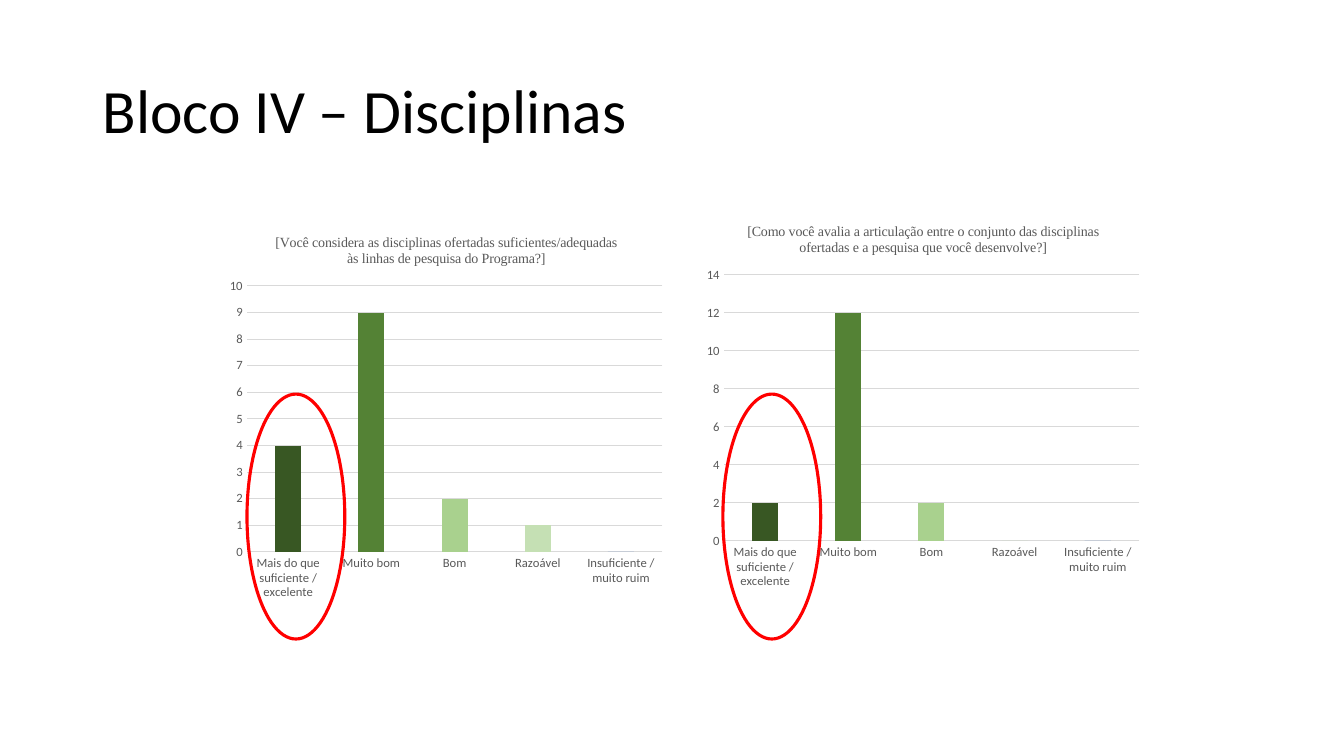
import pptx
import pptx.chart.data
import pptx.dml.color
import pptx.enum.chart
import pptx.enum.shapes
import pptx.enum.text
import pptx.util
from pptx.util import Inches, Pt

RATINGS = ["Mais do que suficiente / excelente", "Muito bom", "Bom",
           "Razoável", "Insuficiente / muito ruim"]
RATING_GREENS = ["385723", "548235", "A9D18E", "C5E0B4"]
GREY_TEXT, GREY_LINE = "595959", "D9D9D9"
CHART_SIZE = (4.47, 3.87)
HIGHLIGHT_TOP, HIGHLIGHT_SIZE = 3.91, (0.97, 2.43)

# question, answers per rating, chart left and top, axis maximum and step, highlight left
QUESTIONS = [
    ("[Você considera as disciplinas ofertadas suficientes/adequadas "
     "às linhas de pesquisa do Programa?]",
     (4, 9, 2, 1, 0), (2.19, 2.16), (10, 1), 2.45),
    ("[Como você avalia a articulação entre o conjunto das disciplinas "
     "ofertadas e a pesquisa que você desenvolve?]",
     (2, 12, 2, 0, 0), (6.92, 2.05), (14, 2), 7.17),
]


def rgb(code):
    return pptx.dml.color.RGBColor.from_string(code)


def box(position, size):
    return [Inches(length) for length in (*position, *size)]


def style_font(font, size, color, name="Calibri"):
    font.size = Pt(size)
    font.name = name
    font.bold = False
    font.color.rgb = rgb(color)


def style_line(line, color, width):
    line.color.rgb = rgb(color)
    line.width = Pt(width)


def add_heading(slide, wording):
    frame = slide.shapes.add_textbox(*box((0.92, 0.4), (11.5, 1.45))).text_frame
    frame.word_wrap = True
    frame.vertical_anchor = pptx.enum.text.MSO_ANCHOR.MIDDLE
    paragraph = frame.paragraphs[0]
    paragraph.line_spacing = 0.9
    run = paragraph.add_run()
    run.text = wording
    style_font(run.font, 44, "000000")


def style_axes(chart, maximum, step):
    for axis in (chart.category_axis, chart.value_axis):
        axis.major_tick_mark = pptx.enum.chart.XL_TICK_MARK.NONE
        axis.minor_tick_mark = pptx.enum.chart.XL_TICK_MARK.NONE
        style_font(axis.tick_labels.font, 9, GREY_TEXT)
    style_line(chart.category_axis.format.line, GREY_LINE, 0.75)
    counts = chart.value_axis
    counts.minimum_scale, counts.maximum_scale = 0, maximum
    counts.major_unit = step
    counts.format.line.fill.background()
    style_line(counts.major_gridlines.format.line, GREY_LINE, 0.75)


def add_rating_chart(slide, question, answers, position, scale):
    ratings = pptx.chart.data.CategoryChartData(number_format="General")
    ratings.categories = RATINGS
    ratings.add_series(question, answers)
    chart = slide.shapes.add_chart(
        pptx.enum.chart.XL_CHART_TYPE.COLUMN_CLUSTERED,
        *box(position, CHART_SIZE), ratings).chart
    style_font(chart.font, 10, "000000")
    chart.has_legend = False
    chart.has_title = True
    run = chart.chart_title.text_frame.paragraphs[0].add_run()
    run.text = question
    style_font(run.font, 10, GREY_TEXT, "Times New Roman")
    chart.chart_title.include_in_layout = False
    style_axes(chart, *scale)

    columns = chart.plots[0]
    columns.gap_width, columns.overlap = 219, -27
    columns.vary_by_categories = False
    series = columns.series[0]
    series.format.fill.solid()
    series.format.fill.fore_color.rgb = rgb("4472C4")
    for index, green in enumerate(RATING_GREENS):
        fill = series.points[index].format.fill
        fill.solid()
        fill.fore_color.rgb = rgb(green)


def add_highlight(slide, left):
    """Ring the first rating of a chart in red."""
    ring = slide.shapes.add_shape(
        pptx.enum.shapes.MSO_SHAPE.OVAL, *box((left, HIGHLIGHT_TOP), HIGHLIGHT_SIZE))
    ring.shadow.inherit = False
    ring.fill.background()
    style_line(ring.line, "FF0000", 2.25)


def main():
    deck = pptx.Presentation()
    deck.slide_width, deck.slide_height = Inches(13.33), Inches(7.5)
    slide = deck.slides.add_slide(deck.slide_layouts[6])
    add_heading(slide, "Bloco IV – Disciplinas")
    for question, answers, position, scale, _ in QUESTIONS:
        add_rating_chart(slide, question, answers, position, scale)
    for *_, highlight_left in QUESTIONS:
        add_highlight(slide, highlight_left)
    deck.save("out.pptx")


if __name__ == "__main__":
    main()
